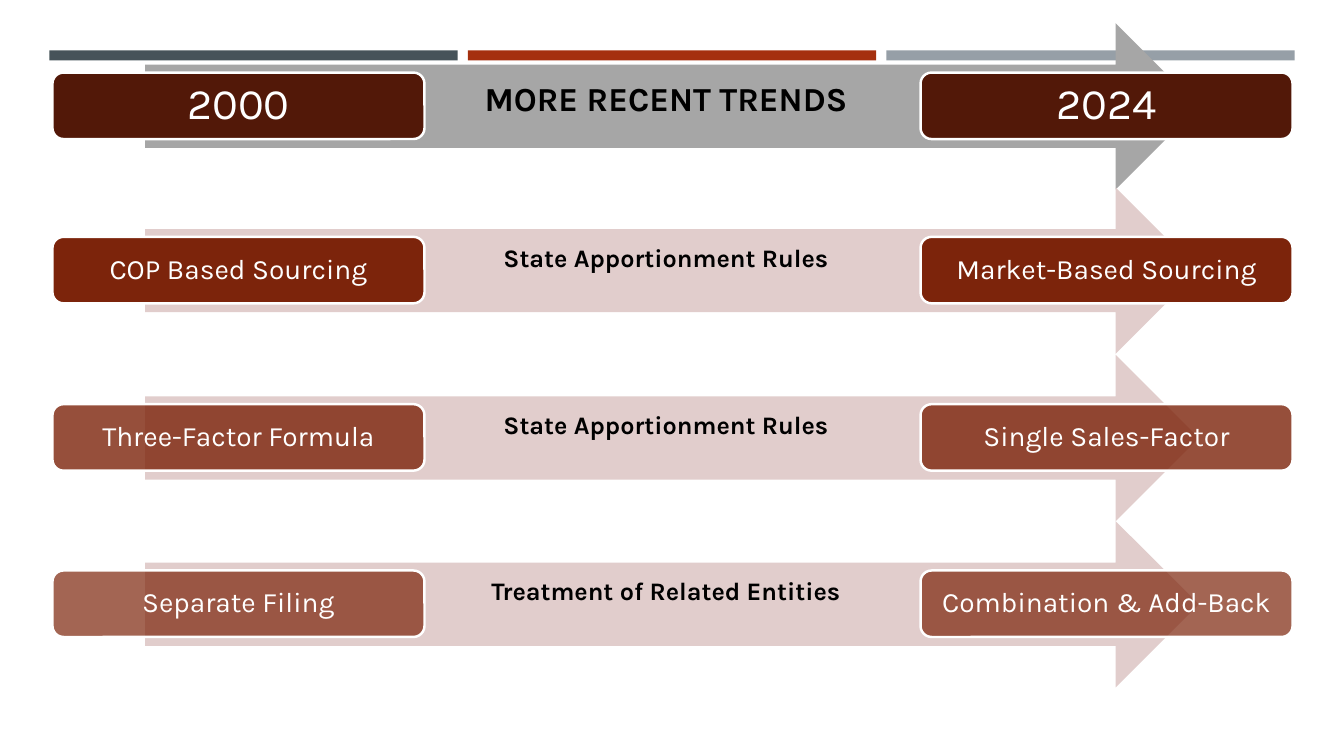
from dataclasses import dataclass

from lxml.etree import SubElement
from pptx import Presentation
from pptx.dml.color import RGBColor
from pptx.enum.shapes import MSO_SHAPE
from pptx.enum.text import MSO_ANCHOR, PP_ALIGN
from pptx.oxml.ns import qn
from pptx.util import Inches, Pt


@dataclass(frozen=True)
class Theme:
    font: str = "Karla"
    white: str = "FFFFFF"
    black: str = "000000"
    slate: str = "465359"
    red: str = "A5300F"
    mist: str = "969FA7"
    gray: str = "A6A6A6"
    pink: str = "E1CDCC"
    dark: str = "521808"
    rust: str = "7C240B"
    year: int = 31
    title: int = 24
    body: int = 20
    label: int = 18


class Board:
    def __init__(self, slide, theme):
        self.slide = slide
        self.theme = theme

    def shape(self, kind, left, top, width, height, fill):
        item = self.slide.shapes.add_shape(
            kind, Inches(left), Inches(top), Inches(width), Inches(height))
        item.shadow.inherit = False
        item.fill.solid()
        item.fill.fore_color.rgb = RGBColor.from_string(fill)
        item.line.fill.background()
        return item

    def text(self, frame, words, size, color, bold=False):
        frame.word_wrap = True
        frame.text = words
        para = frame.paragraphs[0]
        para.alignment = PP_ALIGN.CENTER
        font = para.runs[0].font
        font.name = self.theme.font
        font.size = Pt(size)
        font.bold = bold
        font.color.rgb = RGBColor.from_string(color)
        return para

    def bar(self, left, fill):
        self.shape(MSO_SHAPE.RECTANGLE, left, 0.5, 4.05, 0.1, fill)

    def arrow(self, top, fill):
        self.shape(MSO_SHAPE.RIGHT_ARROW, 1.44, top, 10.45, 1.65, fill)

    def card(self, left, top, words, size, fill, alpha):
        item = self.shape(MSO_SHAPE.ROUNDED_RECTANGLE, left, top, 3.69, 0.66, fill)
        if alpha < 100:
            color = next(item.element.spPr.iter(qn("a:srgbClr")))
            SubElement(color, qn("a:alpha"), val=str(alpha * 1000))
        item.line.color.rgb = RGBColor.from_string(self.theme.white)
        item.line.width = Pt(1.75)
        frame = item.text_frame
        frame.vertical_anchor = MSO_ANCHOR.MIDDLE
        frame.margin_left = frame.margin_right = Inches(0.17)
        frame.margin_top = frame.margin_bottom = Inches(0.17)
        para = self.text(frame, words, size, self.theme.white)
        para.line_spacing = 0.9

    def label(self, top, words, size, height):
        box = self.slide.shapes.add_textbox(
            Inches(4.68), Inches(top), Inches(3.85), Inches(height))
        self.text(box.text_frame, words, size, self.theme.black, True)


def main():
    deck = Presentation()
    deck.slide_width = Inches(13.33)
    deck.slide_height = Inches(7.5)
    theme = Theme()
    board = Board(deck.slides.add_slide(deck.slide_layouts[6]), theme)

    for index, fill in enumerate((theme.slate, theme.red, theme.mist)):
        board.bar(0.49 + index * 4.15, fill)

    head = (theme.gray, theme.dark, theme.year, theme.title, 0.5)
    line = (theme.pink, theme.rust, theme.body, theme.label, 0.4)
    rows = (
        (0.23, "2000", "MORE RECENT TRENDS", "2024", 100, head),
        (1.86, "COP Based Sourcing", "State Apportionment Rules",
         "Market-Based Sourcing", 100, line),
        (3.52, "Three-Factor Formula", "State Apportionment Rules",
         "Single Sales-Factor", 80, line),
        (5.17, "Separate Filing", "Treatment of Related Entities",
         "Combination & Add-Back", 70, line),
    )
    for top, past, topic, now, alpha, style in rows:
        back, fill, size, large, height = style
        board.arrow(top, back)
        for left, words in ((0.52, past), (9.13, now)):
            board.card(left, top + 0.49, words, size, fill, alpha)
        board.label(top + 0.49, topic, large, height)

    deck.save("out.pptx")


if __name__ == "__main__":
    main()
